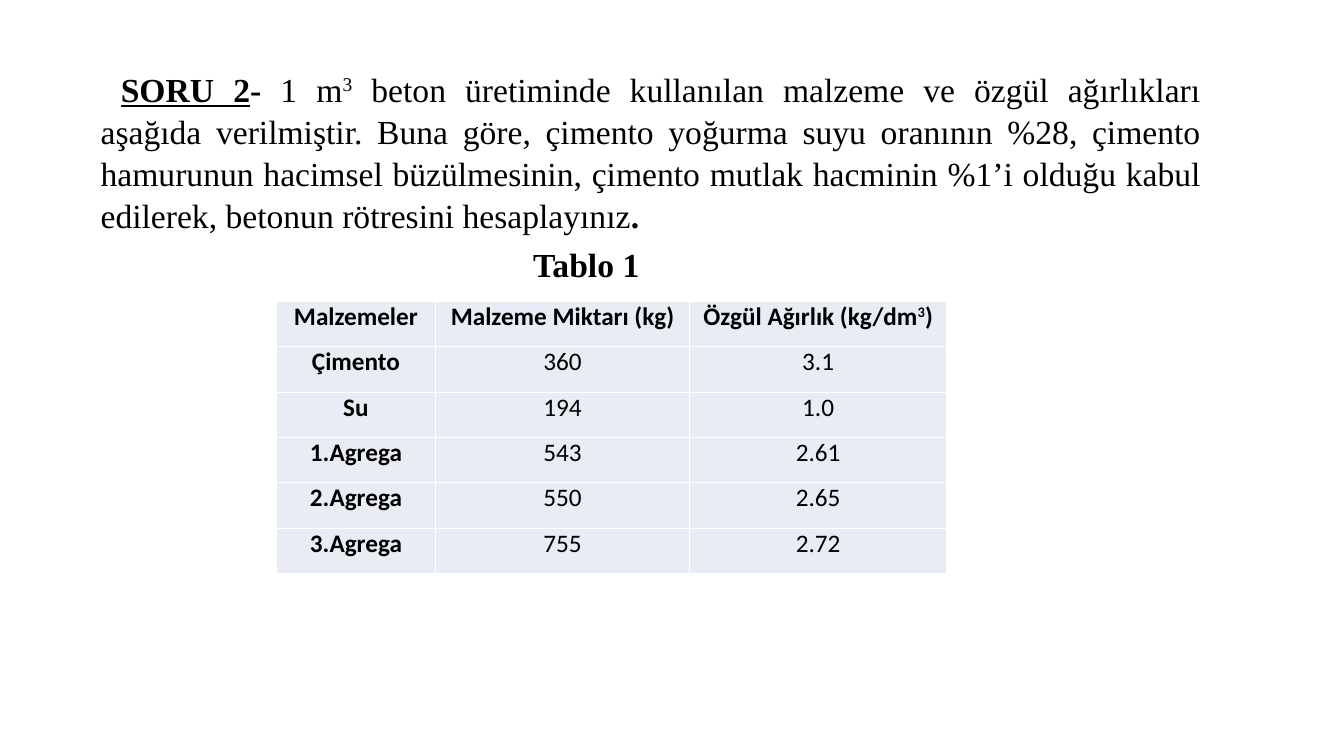
from pptx import Presentation
from pptx.dml.color import RGBColor
from pptx.enum import text as t
from pptx.util import Inches, Pt

BLACK = RGBColor(0x00, 0x00, 0x00)
CELL_FILL = RGBColor(0xE9, 0xEB, 0xF5)
SERIF, SANS = "Times New Roman", "Calibri"

# Runs are (text, styles): b bold, u underlined, s superscript
QUESTION = [
    ("SORU 2", "bu"),
    ("- ", "b"),
    ("1 m", ""),
    ("3", "s"),
    (" beton üretiminde kullanılan malzeme ve özgül ağırlıkları aşağıda "
     "verilmiştir. Buna göre, çimento yoğurma suyu oranının %28, çimento "
     "hamurunun hacimsel büzülmesinin, çimento mutlak hacminin %1’i olduğu "
     "kabul edilerek, betonun rötresini hesaplayınız", ""),
    (".", "b"),
]
CAPTION = [("Tablo 1", "b")]
HEADERS = [
    [("Malzemeler", "b")],
    [("Malzeme Miktarı (kg)", "b")],
    [("Özgül Ağırlık (kg/dm", "b"), ("3", "bs"), (")", "b")],
]
MATERIALS = [
    ("Çimento", "360", "3.1"),
    ("Su", "194", "1.0"),
    ("1.Agrega", "543", "2.61"),
    ("2.Agrega", "550", "2.65"),
    ("3.Agrega", "755", "2.72"),
]
COLUMN_WIDTHS = [1.58, 2.52, 2.55]
ROW_HEIGHT = 0.45


def write_runs(para, runs, font_name, size, align):
    para.alignment = align
    para.font.name = font_name
    para.font.size = Pt(size)
    para.font.color.rgb = BLACK
    for text, styles in runs:
        span = para.add_run()
        span.text = text
        span.font.bold = "b" in styles
        if "u" in styles:
            span.font.underline = True
        if "s" in styles:
            span.font._element.set("baseline", "30000")


def add_text(page, left, top, width, height, runs, align, wrap):
    box = page.shapes.add_textbox(*map(Inches, (left, top, width, height)))
    box.text_frame.word_wrap = wrap
    box.text_frame.auto_size = t.MSO_AUTO_SIZE.SHAPE_TO_FIT_TEXT
    para = box.text_frame.paragraphs[0]
    write_runs(para, runs, SERIF, 24, align)
    return para


def add_materials_table(page, left, top):
    rows = HEADERS, *[[[(name, "b")], [(mass, "")], [(density, "")]]
                      for name, mass, density in MATERIALS]
    table = page.shapes.add_table(
        len(rows), len(COLUMN_WIDTHS), Inches(left), Inches(top),
        Inches(sum(COLUMN_WIDTHS)), Inches(ROW_HEIGHT * len(rows))).table
    table.first_row = table.horz_banding = False
    for column, width in zip(table.columns, COLUMN_WIDTHS):
        column.width = Inches(width)
    for row, contents in zip(table.rows, rows):
        row.height = Inches(ROW_HEIGHT)
        for cell, runs in zip(row.cells, contents):
            cell.fill.solid()
            cell.fill.fore_color.rgb = CELL_FILL
            cell.margin_left = cell.margin_right = Inches(0.05)
            cell.margin_top = cell.margin_bottom = 0
            write_runs(cell.text_frame.paragraphs[0], runs, SANS, 18,
                       t.PP_ALIGN.CENTER)


deck = Presentation()
deck.slide_width, deck.slide_height = Inches(13.33), Inches(7.5)
page = deck.slides.add_slide(deck.slide_layouts[6])

question = add_text(page, 0.9, 0.61, 11.11, 1.72, QUESTION,
                    t.PP_ALIGN.JUSTIFY, True)
question.line_spacing = 1.05
question.space_after = Pt(10)
question._p.get_or_add_pPr().set("indent", str(Inches(0.2)))

add_materials_table(page, 2.74, 2.99)
add_text(page, 5.19, 2.37, 1.26, 0.5, CAPTION, t.PP_ALIGN.LEFT, False)

deck.save("out.pptx")
